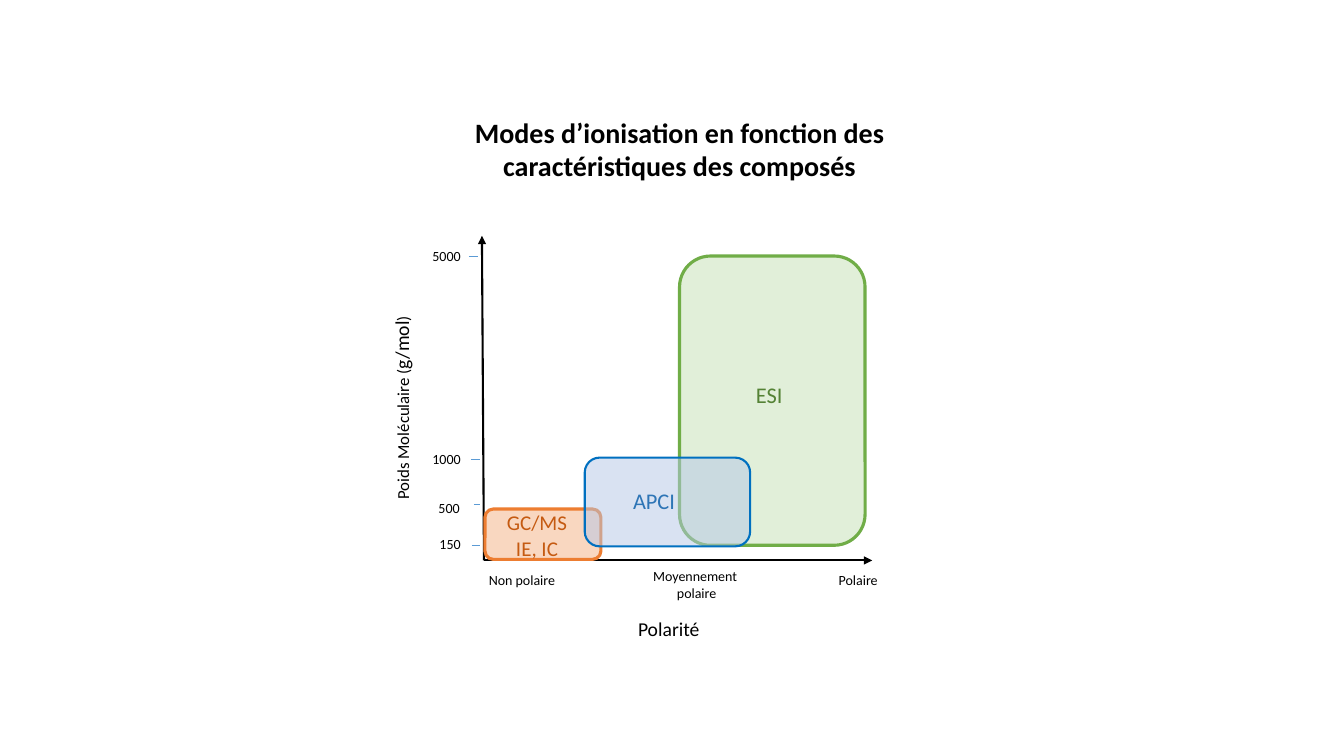
"""Build a slide charting ionisation modes by polarity and molecular weight."""
from dataclasses import dataclass
from typing import Any

import lxml.etree
import pptx
import pptx.dml.color
import pptx.enum.dml
import pptx.enum.shapes
import pptx.enum.text
import pptx.oxml
import pptx.oxml.ns
import pptx.util

Inches = pptx.util.Inches
Align = pptx.enum.text.PP_ALIGN
Anchor = pptx.enum.text.MSO_ANCHOR
Box = tuple[float, float, float, float]
Point = tuple[float, float]


@dataclass(frozen=True)
class Theme:
    """Colours, font and type sizes of the slide."""

    font: str = "Calibri"
    ink: str = "000000"
    tick: str = "5B9BD5"
    gcms: tuple[str, str, str] = ("F4B183", "ED7D31", "C55A11")
    apci: tuple[str, str, str] = ("B4C7E7", "0070C0", "2E75B6")
    esi: tuple[str, str, str] = ("C5E0B4", "70AD47", "548235")
    title: int = 20
    mode: int = 16
    mode_small: int = 15
    axis: int = 14
    axis_small: int = 12
    label: int = 10


THEME = Theme()


@dataclass(frozen=True)
class Run:
    """A stretch of text in one size and colour."""

    text: str
    size: int = THEME.label
    color: str = THEME.ink
    bold: bool = False


@dataclass(frozen=True)
class Label:
    """A text box, one tuple of runs per paragraph."""

    box: Box
    paragraphs: tuple[tuple[Run, ...], ...]
    align: Any = Align.LEFT
    rotation: int = 0


@dataclass(frozen=True)
class Zone:
    """The rounded area covered by one ionisation mode."""

    box: Box
    colors: tuple[str, str, str]
    weight: float


@dataclass(frozen=True)
class Line:
    """A straight line, optionally ending in an arrowhead."""

    start: Point
    end: Point
    color: str
    weight: float
    arrow: bool = False


def rgb(color: str) -> pptx.dml.color.RGBColor:
    """Return a colour object for a hex string."""
    return pptx.dml.color.RGBColor.from_string(color)


def apply(target: Any, values: dict[str, Any]) -> None:
    """Set each named attribute on the target."""
    for name, value in values.items():
        setattr(target, name, value)


def add_child(parent: Any, tag: str, **attrs: str) -> Any:
    """Append a DrawingML element and return it."""
    return lxml.etree.SubElement(parent, pptx.oxml.ns.qn(tag), attrs)


def write(tf: Any, paragraphs: tuple[tuple[Run, ...], ...], align: Any) -> None:
    """Fill a text frame with formatted paragraphs."""
    for i, runs in enumerate(paragraphs):
        p = tf.add_paragraph() if i else tf.paragraphs[0]
        p.alignment = align
        for run in runs:
            r = p.add_run()
            r.text = run.text
            apply(r.font, {"name": THEME.font, "size": pptx.util.Pt(run.size),
                           "bold": run.bold})
            r.font.color.rgb = rgb(run.color)


def draw_title(s: Any, box: Box, text: str) -> None:
    """Place and fill the title placeholder."""
    sp = s.shapes.title
    apply(sp, dict(zip(("left", "top", "width", "height"), map(Inches, box))))
    tf = sp.text_frame
    apply(tf, {"word_wrap": True, "vertical_anchor": Anchor.MIDDLE,
               "auto_size": pptx.enum.text.MSO_AUTO_SIZE.NONE})
    write(tf, ((Run(text, THEME.title, bold=True),),), Align.CENTER)


def draw_label(s: Any, label: Label) -> None:
    """Draw a text box."""
    sp = s.shapes.add_textbox(*map(Inches, label.box))
    sp.rotation = label.rotation
    sp.text_frame.word_wrap = True
    write(sp.text_frame, label.paragraphs, label.align)


def draw_zone(s: Any, zone: Zone) -> None:
    """Draw a half-transparent rounded rectangle."""
    fill, line, _ = zone.colors
    sp = s.shapes.add_shape(pptx.enum.shapes.MSO_SHAPE.ROUNDED_RECTANGLE,
                            *map(Inches, zone.box))
    sp.shadow.inherit = False
    sp.fill.solid()
    sp.fill.fore_color.rgb = rgb(fill)
    clr = sp._element.spPr.find(".//" + pptx.oxml.ns.qn("a:srgbClr"))
    add_child(clr, "a:alpha", val="50000")
    sp.line.color.rgb = rgb(line)
    sp.line.width = pptx.util.Pt(zone.weight)


def draw_line(s: Any, line: Line) -> None:
    """Draw a connector without shadow."""
    sp = s.shapes.add_connector(pptx.enum.shapes.MSO_CONNECTOR.STRAIGHT,
                                *map(Inches, line.start + line.end))
    sp.line.color.rgb = rgb(line.color)
    sp.line.width = pptx.util.Pt(line.weight)
    if line.arrow:
        add_child(sp.line._get_or_add_ln(), "a:tailEnd", type="triangle")
    add_child(sp._element.spPr, "a:effectLst")


def main() -> None:
    """Build and save the presentation."""
    prs = pptx.Presentation()
    apply(prs, {"slide_width": Inches(13.33), "slide_height": Inches(7.5)})
    s = prs.slides.add_slide(prs.slide_layouts[5])
    t = THEME

    draw_title(s, (3.9, 1.09, 5.68, 0.77),
               "Modes d’ionisation en fonction des caractéristiques des composés")

    origin = (4.8, 5.56)
    ticks = [Line((x, y), (end, y), t.tick, 0.5) for x, end, y in
             ((4.65, 4.74, 2.54), (4.67, 4.76, 4.56), (4.7, 4.76, 5), (4.68, 4.76, 5.41))]
    axes = [Line(origin, end, t.ink, 1.5, True) for end in ((4.78, 2.34), (8.65, 5.56))]
    weights = [Label((x, y, w, 0.28), ((Run(text),),)) for text, x, y, w in
               (("5000", 4.19, 2.41, 0.88), ("1000", 4.19, 4.42, 0.53),
                ("500", 4.25, 4.91, 0.45), ("150", 4.26, 5.26, 0.45))]
    polarities = [Label((x, 5.62, 3.16, 0.28), ((Run(text),),)) for text, x in
                  (("Non polaire", 4.75), ("Polaire", 8.22))]
    captions = [
        Label((5.33, 5.58, 3.16, 0.44), ((Run("Moyennement "),), (Run("polaire"),)),
              Align.CENTER),
        Label((6.23, 6.07, 3.16, 0.34), ((Run("Polarité", t.axis),),)),
        Label((2.63, 3.53, 2.71, 0.34),
              ((Run("Poids Moléculaire (", t.axis_small), Run("g/mol", t.axis),
                Run(")", t.axis_small)),), rotation=270),
    ]
    esi = Zone((6.74, 2.54, 1.84, 2.87), t.esi, 2.25)
    gcms = Zone((4.81, 5.05, 1.15, 0.5), t.gcms, 2.25)
    apci = Zone((5.8, 4.54, 1.64, 0.88), t.apci, 1.5)
    modes = [
        Label((6.18, 4.78, 0.71, 0.37), ((Run("APCI", t.mode, t.apci[2]),),)),
        Label((4.9, 5.01, 0.9, 0.61),
              tuple((Run(text, t.mode_small, t.gcms[2]),) for text in ("GC/MS ", "IE, IC ")),
              Align.CENTER),
        Label((7.4, 3.73, 0.53, 0.37), ((Run("ESI", t.mode, t.esi[2]),),)),
    ]

    draw = {Label: draw_label, Zone: draw_zone, Line: draw_line}
    for item in (*ticks, *captions, *polarities, *weights, esi, *axes, gcms, apci, *modes):
        draw[type(item)](s, item)
    prs.save("out.pptx")


if __name__ == "__main__":
    main()
